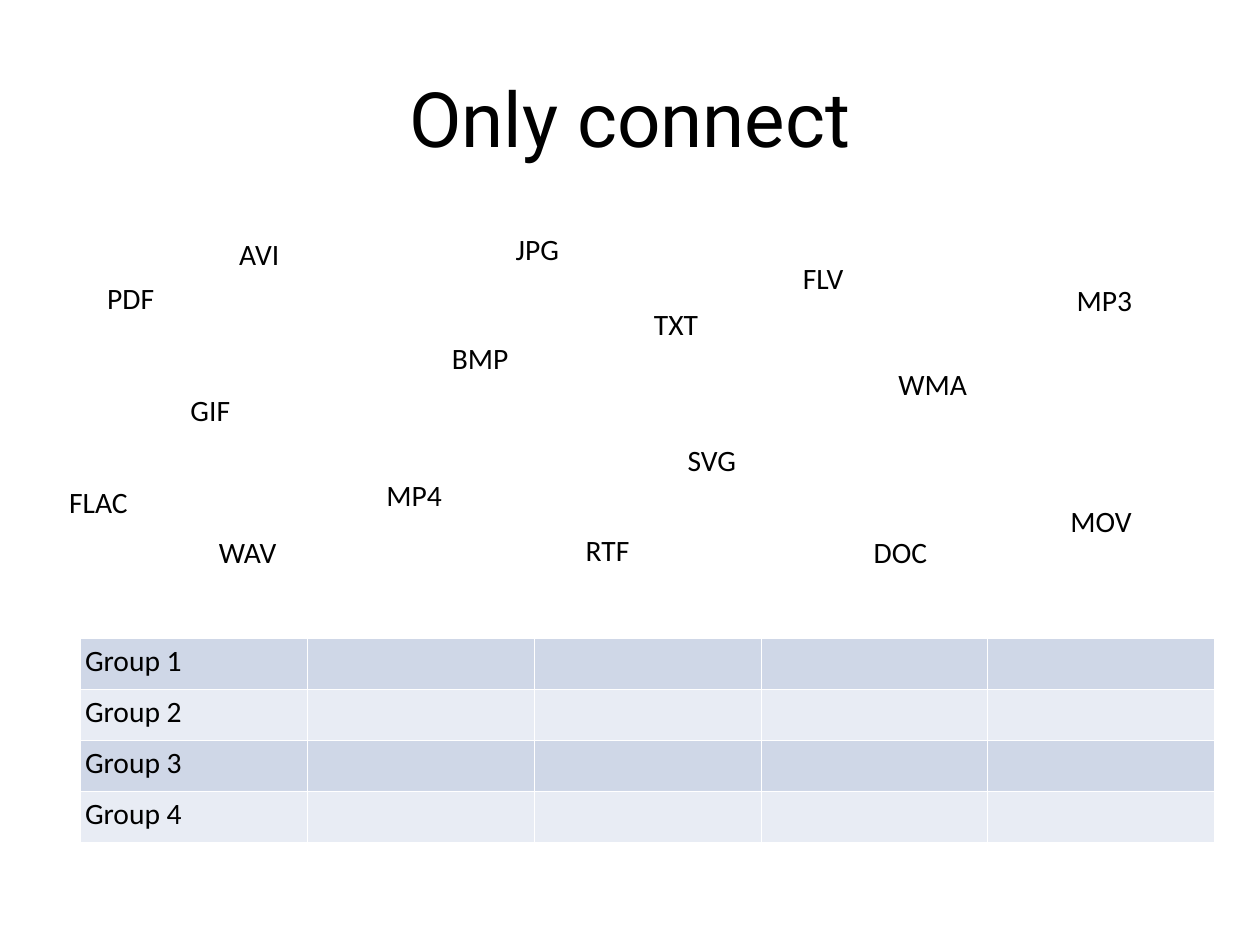
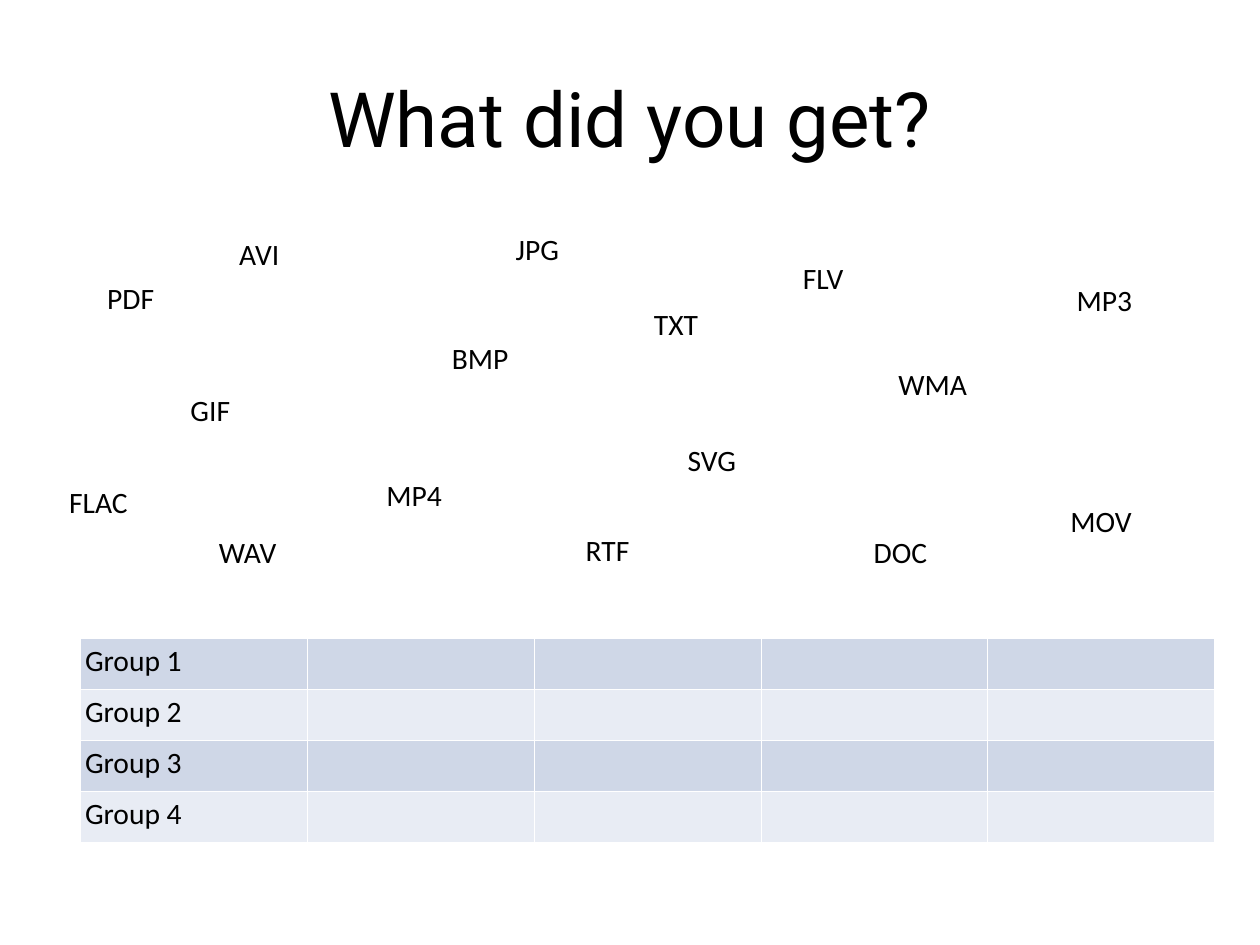
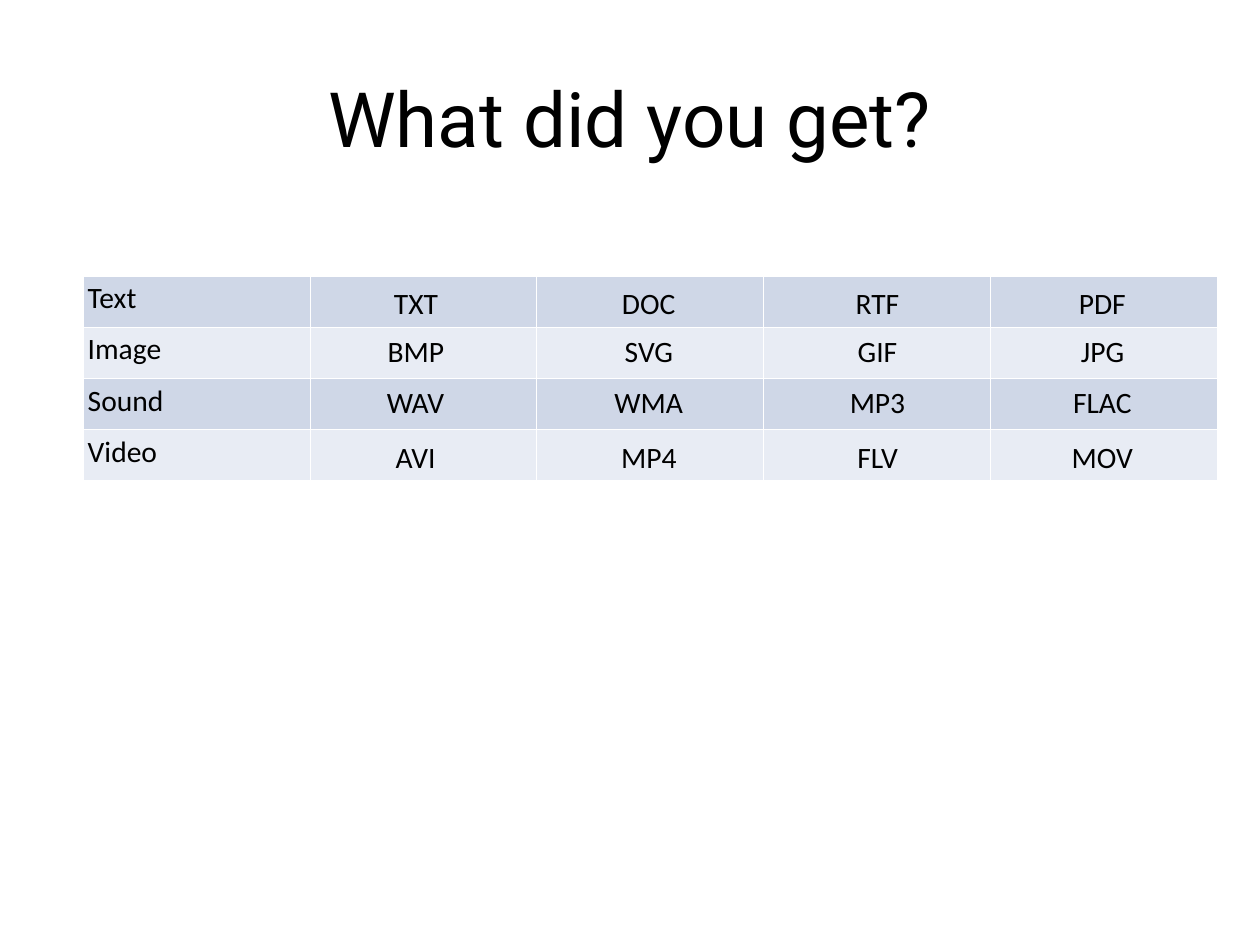
from dataclasses import dataclass

from lxml.etree import SubElement
from pptx import Presentation
from pptx.dml.color import RGBColor
from pptx.enum.text import MSO_ANCHOR, MSO_AUTO_SIZE, PP_ALIGN
from pptx.oxml.ns import qn
from pptx.slide import Slide
from pptx.text.text import TextFrame
from pptx.util import Inches, Pt

COLORS = {"text": "000000", "border": "FFFFFF", "odd_row": "CFD7E7", "even_row": "E8ECF4"}
TITLE_FONT, BODY_FONT = "Roboto", "Calibri"
TITLE_SIZE, BODY_SIZE = 62, 24
BOX_INSET, CELL_INSET = 0.07, 0.05
COLUMNS = 5
TABLE_WIDTH, TABLE_HEIGHT = 12.8, 2.31
LABEL_HEIGHT = 0.55


@dataclass(frozen=True)
class FileFormat:
    name: str
    width: float
    left: float
    top: float


@dataclass(frozen=True)
class AnswerRow:
    group: str
    formats: tuple[str, ...]
    label_top: float


FORMATS = (
    FileFormat("AVI", 0.61, 2.63, 2.59),
    FileFormat("MOV", 0.85, 12.01, 5.61),
    FileFormat("MP4", 0.78, 4.29, 5.32),
    FileFormat("FLV", 0.61, 8.99, 2.87),
    FileFormat("JPG", 0.64, 5.75, 2.54),
    FileFormat("GIF", 0.6, 2.08, 4.35),
    FileFormat("BMP", 0.79, 5.03, 3.77),
    FileFormat("SVG", 0.7, 7.69, 4.92),
    FileFormat("MP3", 0.78, 12.08, 3.11),
    FileFormat("WAV", 0.81, 2.4, 5.96),
    FileFormat("FLAC", 0.82, 0.71, 5.39),
    FileFormat("WMA", 0.93, 10.07, 4.06),
    FileFormat("PDF", 0.69, 1.14, 3.09),
    FileFormat("RTF", 0.65, 6.54, 5.94),
    FileFormat("TXT", 0.65, 7.31, 3.38),
    FileFormat("DOC", 0.76, 9.79, 5.96),
)
ANSWERS = (
    AnswerRow("Text", ("TXT", "DOC", "RTF", "PDF"), 3.15),
    AnswerRow("Image", ("BMP", "SVG", "GIF", "JPG"), 3.69),
    AnswerRow("Sound", ("WAV", "WMA", "MP3", "FLAC"), 4.27),
    AnswerRow("Video", ("AVI", "MP4", "FLV", "MOV"), 4.89),
)
ANSWER_CENTERS = (4.7, 7.33, 9.91, 12.45)


def write(frame: TextFrame, text: str, font_name: str, size: float) -> None:
    frame.text = text
    font = frame.paragraphs[0].runs[0].font
    font.name = font_name
    font.size = Pt(size)
    font.color.rgb = RGBColor.from_string(COLORS["text"])


def add_text(slide: Slide, left: float, top: float, width: float, height: float,
             text: str, font_name: str, size: float) -> TextFrame:
    frame = slide.shapes.add_textbox(
        Inches(left), Inches(top), Inches(width), Inches(height)).text_frame
    frame.margin_left = frame.margin_right = Inches(BOX_INSET)
    frame.margin_top = frame.margin_bottom = Inches(BOX_INSET)
    write(frame, text, font_name, size)
    return frame


def add_title(slide: Slide, text: str) -> None:
    frame = add_text(slide, 0.71, 0.43, 12.8, 1.78, text, TITLE_FONT, TITLE_SIZE)
    frame.word_wrap = True
    frame.vertical_anchor = MSO_ANCHOR.MIDDLE
    frame.paragraphs[0].alignment = PP_ALIGN.CENTER


def add_label(slide: Slide, name: str, left: float, top: float, width: float) -> None:
    frame = add_text(slide, left, top, width, LABEL_HEIGHT, name, BODY_FONT, BODY_SIZE)
    frame.word_wrap = False
    frame.auto_size = MSO_AUTO_SIZE.SHAPE_TO_FIT_TEXT


def style_cell(cell, fill: str) -> None:
    """Give a table cell its insets, thin borders and row colour."""
    cell.margin_left = cell.margin_right = Inches(CELL_INSET)
    cell.margin_top = cell.margin_bottom = Inches(CELL_INSET)
    properties = cell._tc.get_or_add_tcPr()
    for side in ("a:lnL", "a:lnR", "a:lnT", "a:lnB"):
        line = SubElement(properties, qn(side), w=str(Pt(1)))
        SubElement(SubElement(line, qn("a:solidFill")), qn("a:srgbClr"), val=COLORS["border"])
    cell.fill.solid()
    cell.fill.fore_color.rgb = RGBColor.from_string(fill)


def add_group_table(slide: Slide, left: float, top: float, groups: list[str]) -> None:
    table = slide.shapes.add_table(
        len(groups), COLUMNS, Inches(left), Inches(top),
        Inches(TABLE_WIDTH), Inches(TABLE_HEIGHT)).table
    table.first_row = table.horz_banding = False
    for index, group in enumerate(groups):
        fill = COLORS["even_row" if index % 2 else "odd_row"]
        for column in range(COLUMNS):
            style_cell(table.cell(index, column), fill)
        write(table.cell(index, 0).text_frame, group, BODY_FONT, BODY_SIZE)


def add_puzzle(slide: Slide) -> None:
    """Scatter the formats above a table of unnamed groups."""
    add_group_table(slide, 0.91, 7.21, [f"Group {number}" for number in range(1, 5)])
    for item in FORMATS:
        add_label(slide, item.name, item.left, item.top, item.width)


def add_answers(slide: Slide) -> None:
    """Place each format in the row of its group."""
    add_group_table(slide, 0.94, 3.12, [row.group for row in ANSWERS])
    widths = {item.name: item.width for item in FORMATS}
    for row in ANSWERS:
        for name, center in zip(row.formats, ANSWER_CENTERS):
            add_label(slide, name, center - widths[name] / 2, row.label_top, widths[name])


def main() -> None:
    deck = Presentation()
    deck.slide_width, deck.slide_height = Inches(14.22), Inches(10.67)
    for title, add_content in (
        ("Only connect", add_puzzle),
        ("What did you get?", add_puzzle),
        ("What did you get?", add_answers),
    ):
        slide = deck.slides.add_slide(deck.slide_layouts[6])
        add_title(slide, title)
        add_content(slide)
    deck.save("out.pptx")


if __name__ == "__main__":
    main()
